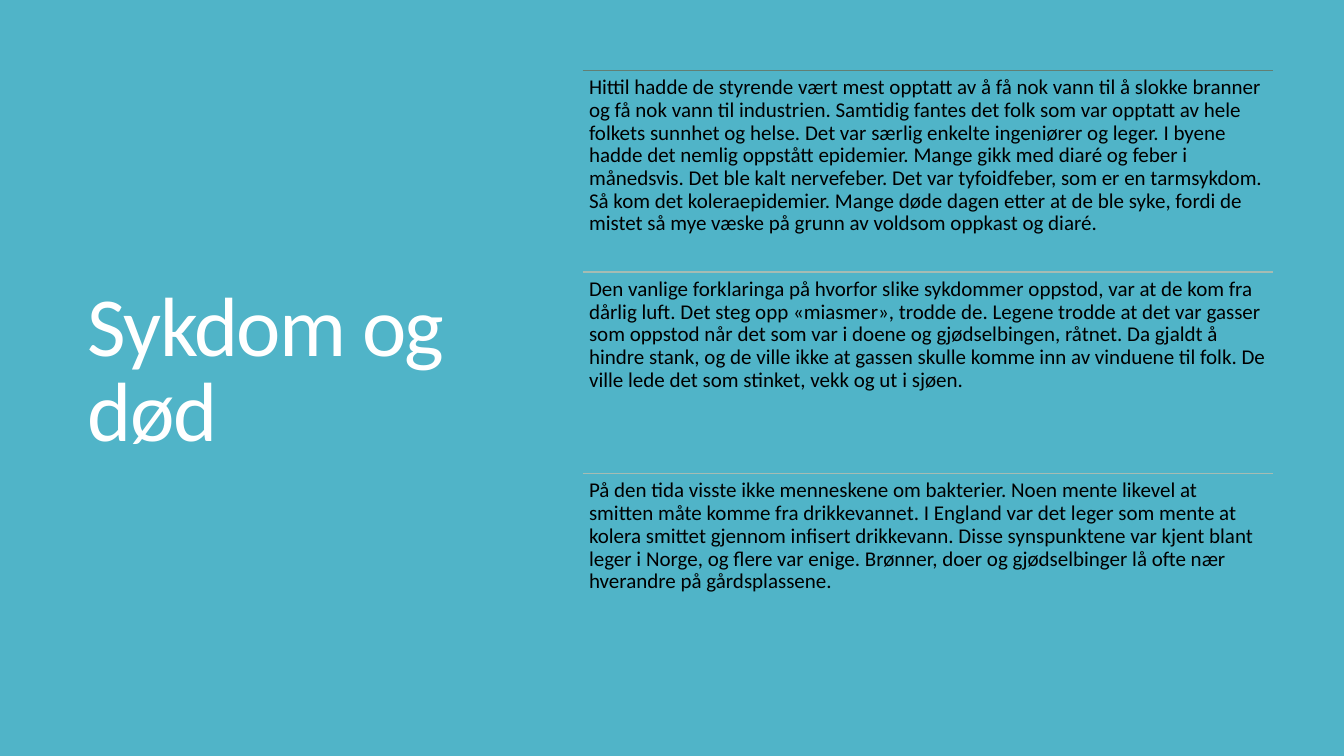
from dataclasses import dataclass

from lxml import etree
from pptx import Presentation
from pptx.dml.color import RGBColor
from pptx.enum.shapes import MSO_CONNECTOR
from pptx.enum.text import MSO_ANCHOR, MSO_AUTO_SIZE, PP_ALIGN
from pptx.oxml.ns import qn
from pptx.util import Pt

STRAIGHT = MSO_CONNECTOR.STRAIGHT
TOP, MIDDLE = MSO_ANCHOR.TOP, MSO_ANCHOR.MIDDLE
NO_FIT = MSO_AUTO_SIZE.NONE
LEFT = PP_ALIGN.LEFT
TITLE_ONLY = 5
SCALE = 9525  # EMU per px, 96 px to the inch


@dataclass(frozen=True)
class Theme:
    font: str = "Calibri"
    back: str = "50B4C8"
    title: str = "FFFFFF"
    body: str = "000000"
    first: str = "627F74"
    rule: str = "A6BCB3"
    title_size: int = 60
    body_size: int = 15


THEME = Theme()
COL_X, COL_Y, COL_W, ROW_H = 555, 67, 657, 192
PAD = 6

TEXTS = [
    "Hittil hadde de styrende vært mest opptatt av å få nok vann til å slokke "
    "branner og få nok vann til industrien. Samtidig fantes det folk som var "
    "opptatt av hele folkets sunnhet og helse. Det var særlig enkelte ingeniører "
    "og leger. I byene hadde det nemlig oppstått epidemier. Mange gikk med diaré "
    "og feber i månedsvis. Det ble kalt nervefeber. Det var tyfoidfeber, som er "
    "en tarmsykdom. Så kom det koleraepidemier. Mange døde dagen etter at de ble "
    "syke, fordi de mistet så mye væske på grunn av voldsom oppkast og diaré.",
    "Den vanlige forklaringa på hvorfor slike sykdommer oppstod, var at de kom "
    "fra dårlig luft. Det steg opp «miasmer», trodde de. Legene trodde at det var "
    "gasser som oppstod når det som var i doene og gjødselbingen, råtnet. Da "
    "gjaldt å hindre stank, og de ville ikke at gassen skulle komme inn av "
    "vinduene til folk. De ville lede det som stinket, vekk og ut i sjøen.",
    "På den tida visste ikke menneskene om bakterier. Noen mente likevel at "
    "smitten måte komme fra drikkevannet. I England var det leger som mente at "
    "kolera smittet gjennom infisert drikkevann. Disse synspunktene var kjent "
    "blant leger i Norge, og flere var enige. Brønner, doer og gjødselbinger lå "
    "ofte nær hverandre på gårdsplassene.",
]


def px(count):
    return count * SCALE


def color(code):
    return RGBColor.from_string(code)


def fill_text(frame, text, size, tint, anchor, spacing):
    """Set the text as one left-aligned paragraph and return its run."""
    frame.text = text
    frame.word_wrap = True
    frame.auto_size = NO_FIT
    frame.vertical_anchor = anchor
    para = frame.paragraphs[0]
    para.alignment = LEFT
    para.line_spacing = spacing
    run = para.runs[0]
    run.font.name = THEME.font
    run.font.size = Pt(size)
    run.font.color.rgb = color(tint)
    return run


def set_title(slide, text):
    title = slide.shapes.title
    title.left, title.top = px(74), px(67)
    title.width, title.height = px(420), px(577)
    run = fill_text(title.text_frame, text, THEME.title_size, THEME.title,
                    MIDDLE, 0.85)
    run.font._element.set("spc", "-120")


def add_rule(slide, y, tint):
    line = slide.shapes.add_connector(
        STRAIGHT, px(COL_X), px(y), px(COL_X + COL_W), px(y))
    line.line.color.rgb = color(tint)
    line.line.width = Pt(1)
    etree.SubElement(line._element.spPr, qn("a:effectLst"))


def add_body(slide, y, text):
    box = slide.shapes.add_textbox(px(COL_X), px(y), px(COL_W), px(ROW_H))
    frame = box.text_frame
    frame.margin_left = frame.margin_right = px(PAD)
    frame.margin_top = frame.margin_bottom = px(PAD)
    fill_text(frame, text, THEME.body_size, THEME.body, TOP, 0.9)


def main():
    deck = Presentation()
    deck.slide_width, deck.slide_height = px(1280), px(720)
    slide = deck.slides.add_slide(deck.slide_layouts[TITLE_ONLY])
    back = slide.background.fill
    back.solid()
    back.fore_color.rgb = color(THEME.back)

    set_title(slide, "Sykdom og død")
    for row, text in enumerate(TEXTS):
        y = COL_Y + row * ROW_H
        add_rule(slide, y, THEME.rule if row else THEME.first)
        add_body(slide, y, text)
    deck.save("out.pptx")


if __name__ == "__main__":
    main()
